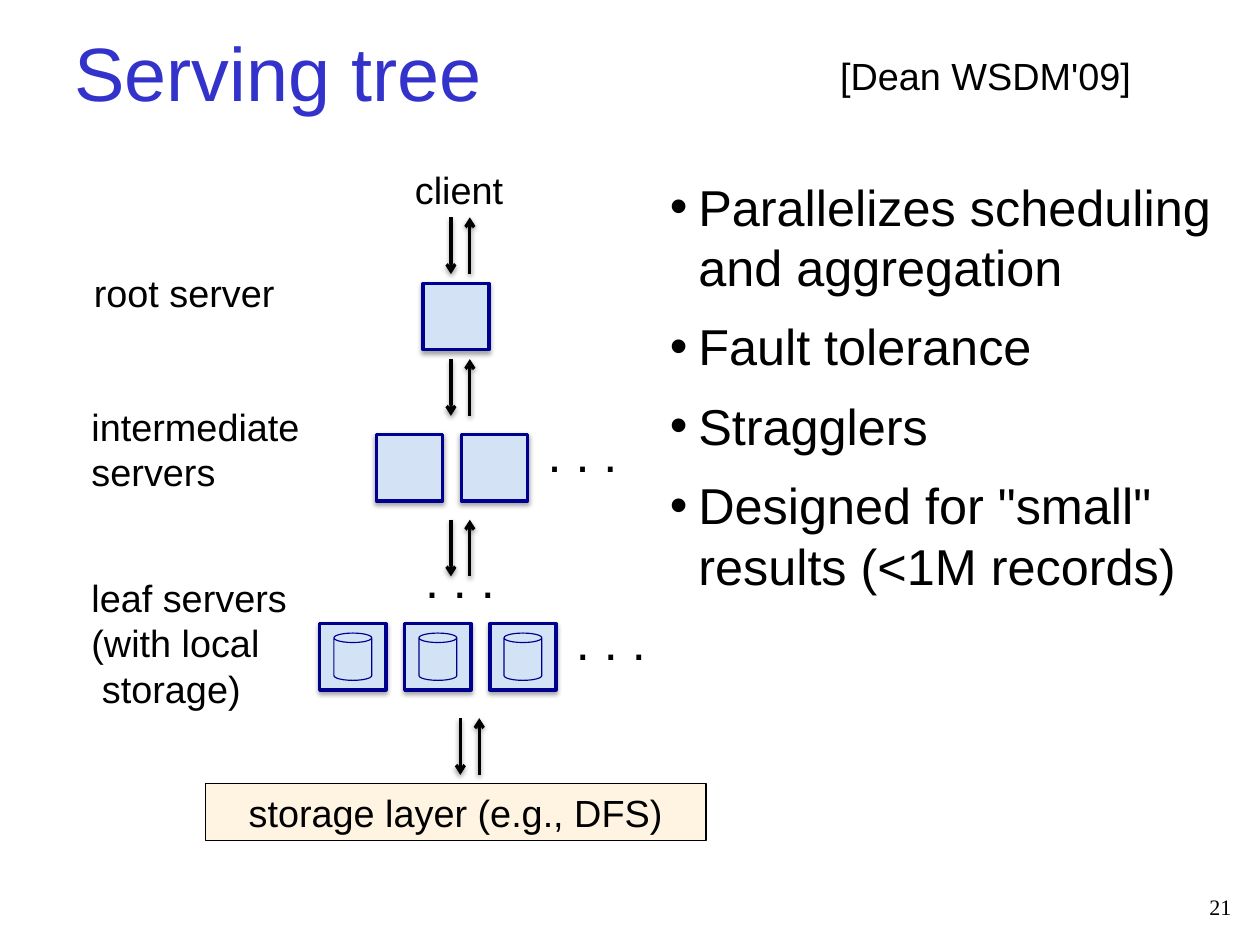
from dataclasses import dataclass

from lxml.etree import SubElement
from pptx import Presentation
from pptx.dml.color import RGBColor
from pptx.enum.shapes import MSO_CONNECTOR, MSO_SHAPE
from pptx.enum.text import MSO_ANCHOR, PP_ALIGN
from pptx.oxml.ns import qn
from pptx.util import Pt

BLACK = "000000"
NAVY = "000090"
SERVER_SIZE = 42
SERVER_STEP = 54
ARROW_LENGTH = 36
ARROW_GAP = 12


@dataclass
class Label:
    lines: list[str]
    left: float
    top: float
    width: float
    height: float
    size: float = 24
    color: str = BLACK
    font: str = "Arial"
    wrap: bool = False
    align: PP_ALIGN = PP_ALIGN.LEFT
    anchor: MSO_ANCHOR = MSO_ANCHOR.TOP


@dataclass
class ServerRow:
    left: float
    top: float
    count: int
    has_storage: bool = False


@dataclass
class Exchange:
    """A request arrow down and a reply arrow up, side by side."""
    left: float
    top: float


@dataclass
class Dots:
    left: float
    top: float


LABELS = [
    Label(["Serving tree"], 40, 12, 720, 66, size=48, color="3333CC",
          wrap=True, anchor=MSO_ANCHOR.MIDDLE),
    Label(["[Dean WSDM'09]"], 526.3, 30.2, 240, 36, wrap=True),
    Label(["client"], 256.3, 102.2, 71, 36),
    Label(["root server"], 52.5, 168, 130, 36),
    Label(["intermediate", "servers"], 51, 252.7, 148, 65.5),
    Label(["leaf servers", "(with local", "storage)"], 51, 361.4, 141, 94.5),
    Label(["21"], 730, 564, 59, 23, size=14, font="Times New Roman",
          wrap=True, align=PP_ALIGN.RIGHT),
]
SERVER_ROWS = [
    ServerRow(268.6, 180, 1),
    ServerRow(239, 276, 2),
    ServerRow(203, 396, 3, has_storage=True),
]
EXCHANGES = [Exchange(286.3, 138), Exchange(286.3, 228),
             Exchange(286.3, 330), Exchange(292.3, 456)]
ELLIPSES = [Dots(340.6, 264.2), Dots(262.8, 344.2), Dots(358.6, 383.8)]
POINTS = [
    "Parallelizes scheduling and aggregation",
    "Fault tolerance",
    "Stragglers",
    'Designed for "small" results (<1M records)',
]


def rgb(color: str) -> RGBColor:
    return RGBColor.from_string(color)


def indent(para, margin: float, first_line: float = 0) -> None:
    properties = para._p.get_or_add_pPr()
    properties.set("marL", str(Pt(margin)))
    properties.set("indent", str(Pt(first_line)))


def style_text(para, size: float, color: str = BLACK, font: str = "Arial") -> None:
    for span in para.runs:
        span.font.size = Pt(size)
        span.font.name = font
        span.font.color.rgb = rgb(color)


def add_shadow(shape, opacity: int, distance: float) -> None:
    effects = SubElement(shape._element.spPr, qn("a:effectLst"))
    shadow = SubElement(effects, qn("a:outerShdw"), blurRad=str(Pt(3.1)),
                        dist=str(Pt(distance)), dir="5400000", rotWithShape="0")
    tint = SubElement(shadow, qn("a:srgbClr"), val=BLACK)
    SubElement(tint, qn("a:alpha"), val=str(opacity * 1000))


def add_label(page, label: Label):
    box = page.shapes.add_textbox(Pt(label.left), Pt(label.top),
                                  Pt(label.width), Pt(label.height))
    frame = box.text_frame
    frame.text = "\n".join(label.lines)
    frame.word_wrap = label.wrap
    frame.vertical_anchor = label.anchor
    for para in frame.paragraphs:
        para.alignment = label.align
        style_text(para, label.size, label.color, label.font)
    return box


def add_box(page, kind: MSO_SHAPE, left: float, top: float, width: float,
            height: float, fill: str | None, line: str, line_width: float):
    box = page.shapes.add_shape(kind, Pt(left), Pt(top), Pt(width), Pt(height))
    if fill:
        box.fill.solid()
        box.fill.fore_color.rgb = rgb(fill)
    else:
        box.fill.background()
    box.line.color.rgb = rgb(line)
    box.line.width = Pt(line_width)
    return box


def add_server_row(page, row: ServerRow) -> None:
    for column in range(row.count):
        left = row.left + column * SERVER_STEP
        server = add_box(page, MSO_SHAPE.RECTANGLE, left, row.top,
                         SERVER_SIZE, SERVER_SIZE, "D3E2F5", NAVY, 2.25)
        add_shadow(server, 35, 1.8)
        if row.has_storage:
            disk = add_box(page, MSO_SHAPE.CAN, left + 9, row.top + 6,
                           24, 30, None, NAVY, 0.75)
            disk.shadow.inherit = False


def add_arrow(page, x: float, start: float, end: float) -> None:
    arrow = page.shapes.add_connector(MSO_CONNECTOR.STRAIGHT,
                                      Pt(x), Pt(start), Pt(x), Pt(end))
    arrow.line.color.rgb = rgb(BLACK)
    arrow.line.width = Pt(2)
    SubElement(arrow.line._get_or_add_ln(), qn("a:tailEnd"), type="arrow")
    add_shadow(arrow, 38, 1.6)


def add_exchange(page, exchange: Exchange) -> None:
    bottom = exchange.top + ARROW_LENGTH
    add_arrow(page, exchange.left, exchange.top, bottom)
    add_arrow(page, exchange.left + ARROW_GAP, bottom, exchange.top)


def add_storage_layer(page) -> None:
    layer = add_box(page, MSO_SHAPE.RECTANGLE, 130.3, 497.5, 318, 36,
                    "FFF4E2", BLACK, 0.75)
    layer.shadow.inherit = False
    layer.text_frame.text = "storage layer (e.g., DFS)"
    para = layer.text_frame.paragraphs[0]
    para.alignment = PP_ALIGN.CENTER
    style_text(para, 24)


def add_points(page) -> None:
    box = add_label(page, Label(POINTS, 418.3, 108, 372.2, 276.5,
                                size=32, wrap=True))
    for para in box.text_frame.paragraphs:
        para.space_after = Pt(12)
        indent(para, 18, -18)
        properties = para._p.get_or_add_pPr()
        SubElement(properties, qn("a:buFont"), typeface="Arial")
        SubElement(properties, qn("a:buChar"), char="•")


def main() -> None:
    deck = Presentation()
    deck.slide_width, deck.slide_height = Pt(800), Pt(600)
    page = deck.slides.add_slide(deck.slide_layouts[6])

    add_storage_layer(page)
    for row in SERVER_ROWS:
        add_server_row(page, row)
    for exchange in EXCHANGES:
        add_exchange(page, exchange)
    for dots in ELLIPSES:
        add_label(page, Label([". . ."], dots.left, dots.top, 60, 46, size=32))
    for label in LABELS:
        box = add_label(page, label)
        if label.lines[-1] == "storage)":
            indent(box.text_frame.paragraphs[-1], 6.7)
    add_points(page)

    deck.save("out.pptx")


if __name__ == "__main__":
    main()
